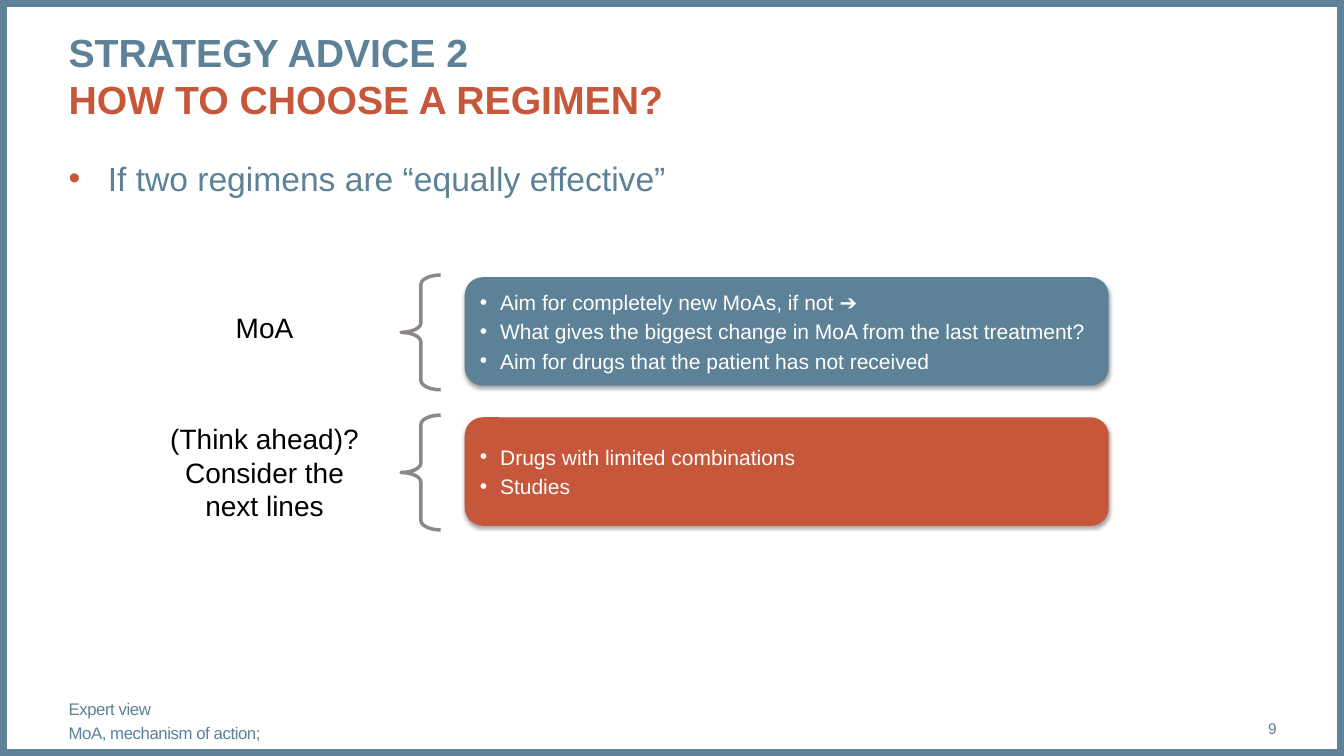
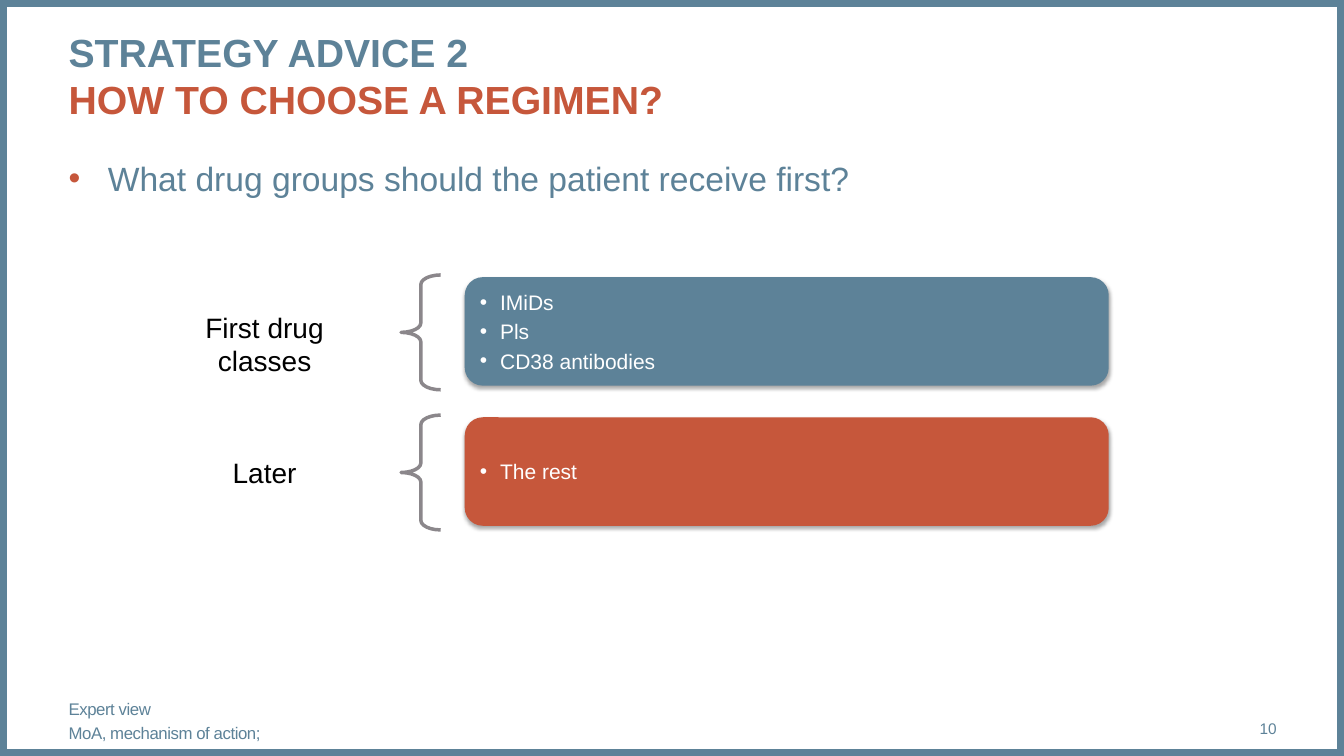
from lxml.etree import SubElement
from pptx import Presentation
from pptx.dml.color import RGBColor
from pptx.enum.shapes import MSO_SHAPE
from pptx.enum.text import MSO_ANCHOR, MSO_AUTO_SIZE, PP_ALIGN
from pptx.oxml.ns import qn
from pptx.util import Pt

BLUE, RUST, GREY = "5D8298", "C6573B", "8B878B"
WHITE, BLACK = "FFFFFF", "000000"
LEFT, WIDTH, PITCH = 49, 863, 100.1

SLIDES = [
    (9, "If two regimens are “equally effective”", [
        ("MoA", ["Aim for completely new MoAs, if not ➔",
                 "What gives the biggest change in MoA from the last treatment?",
                 "Aim for drugs that the patient has not received"]),
        ("(Think ahead)?\nConsider the\vnext lines",
         ["Drugs with limited combinations", "Studies"]),
    ]),
    (10, "What drug groups should the patient receive first?", [
        ("First drug\vclasses", ["IMiDs", "Pls", "CD38 antibodies"]),
        ("Later", ["The rest"]),
    ]),
]


def rgb(code):
    return RGBColor.from_string(code)


def write(shape, lines, size, colors, bold=False, align=PP_ALIGN.LEFT,
          anchor=MSO_ANCHOR.TOP, inset=(0, 0), before=0, after=0,
          indent=0, dot=None, track=0):
    """Fill a shape with paragraphs; colors are used in turn."""
    frame = shape.text_frame
    frame.word_wrap, frame.auto_size = True, MSO_AUTO_SIZE.NONE
    frame.vertical_anchor = anchor
    frame.margin_left = frame.margin_right = Pt(inset[0])
    frame.margin_top = frame.margin_bottom = Pt(inset[1])
    for i, line in enumerate(lines):
        para = frame.paragraphs[0] if i == 0 else frame.add_paragraph()
        para.text = line
        if dot:
            props = para._p.get_or_add_pPr()
            props.set("marL", str(Pt(indent)))
            props.set("indent", str(-Pt(indent)))
            tint = SubElement(props, qn("a:buClr"))
            SubElement(tint, qn("a:srgbClr"), val=dot)
            SubElement(props, qn("a:buFont"), typeface="Arial")
            SubElement(props, qn("a:buChar"), char="•")
        para.alignment = align
        para.space_before = Pt(before if i else 0)
        para.space_after = Pt(after)
        for run in para.runs:
            font = run.font
            font.name, font.size, font.bold = "Arial", Pt(size), bold
            font.color.rgb = rgb(colors[i % len(colors)])
            if track:
                run._r.get_or_add_rPr().set("spc", str(track))


deck = Presentation()
deck.slide_width, deck.slide_height = Pt(960), Pt(540)

for number, lead, groups in SLIDES:
    slide = deck.slides.add_slide(deck.slide_layouts[1])
    shapes = slide.shapes

    # Frame around the slide
    frame = shapes.add_shape(MSO_SHAPE.RECTANGLE, 0, 0, Pt(960), Pt(540))
    frame.shadow.inherit = False
    frame.fill.background()
    frame.line.color.rgb, frame.line.width = rgb(BLUE), Pt(10)

    # Title and lead question
    title, body = shapes.title, slide.placeholders[1]
    title.left, title.top, title.width, title.height = (
        Pt(LEFT), Pt(20), Pt(WIDTH), Pt(68))
    write(title, ["STRATEGY ADVICE 2", "HOW TO CHOOSE A REGIMEN?"], 28,
          [BLUE, RUST], bold=True)
    body.left, body.top, body.width, body.height = (
        Pt(LEFT), Pt(112.5), Pt(WIDTH), Pt(356))
    write(body, [lead], 24, [BLUE], indent=28, dot=RUST)

    # Footer and slide number
    foot = shapes.add_textbox(Pt(LEFT), Pt(500.5), Pt(801), Pt(29))
    write(foot, ["Expert view", "MoA, mechanism of action;"], 12, [BLUE],
          anchor=MSO_ANCHOR.MIDDLE, before=3, track=-30)
    page = shapes.add_textbox(Pt(850), Pt(506), Pt(62), Pt(29))
    write(page, [str(number)], 11, [BLUE], align=PP_ALIGN.RIGHT,
          anchor=MSO_ANCHOR.MIDDLE)

    # One row for each group: label, brace, card
    spots = [(218, 55, MSO_ANCHOR.TOP), (297, 80, MSO_ANCHOR.MIDDLE)]
    for row, (name, points) in enumerate(groups):
        drop = row * PITCH
        top, high, anchor = spots[row]
        label = shapes.add_textbox(Pt(99), Pt(top), Pt(180), Pt(high))
        write(label, name.split("\n"), 20, [BLACK], align=PP_ALIGN.CENTER,
              anchor=anchor, inset=(7.2, 3.6))

        brace = shapes.add_shape(MSO_SHAPE.LEFT_BRACE, Pt(286.5),
                                 Pt(196.4 + drop), Pt(28.3), Pt(82))
        brace.shadow.inherit = False
        brace.adjustments[0] = 0.24
        brace.fill.background()
        brace.line.color.rgb, brace.line.width = rgb(GREY), Pt(2.5)

        card = shapes.add_shape(MSO_SHAPE.ROUNDED_RECTANGLE, Pt(332),
                                Pt(198 + drop), Pt(460), Pt(77.5))
        card.fill.solid()
        card.fill.fore_color.rgb = rgb([BLUE, RUST][row])
        card.line.fill.background()
        card.shadow.inherit = False
        glow = SubElement(card._element.spPr.find(qn("a:effectLst")),
                          qn("a:outerShdw"), blurRad=str(Pt(3.1)),
                          dist=str(Pt(1.8)), dir="5400000", rotWithShape="0")
        tone = SubElement(glow, qn("a:srgbClr"), val=BLACK)
        SubElement(tone, qn("a:alpha"), val="35000")
        write(card, points, 15, [WHITE], anchor=MSO_ANCHOR.MIDDLE,
              inset=(7.2, 3.6), after=3, indent=14.4, dot=WHITE)

deck.save("out.pptx")
